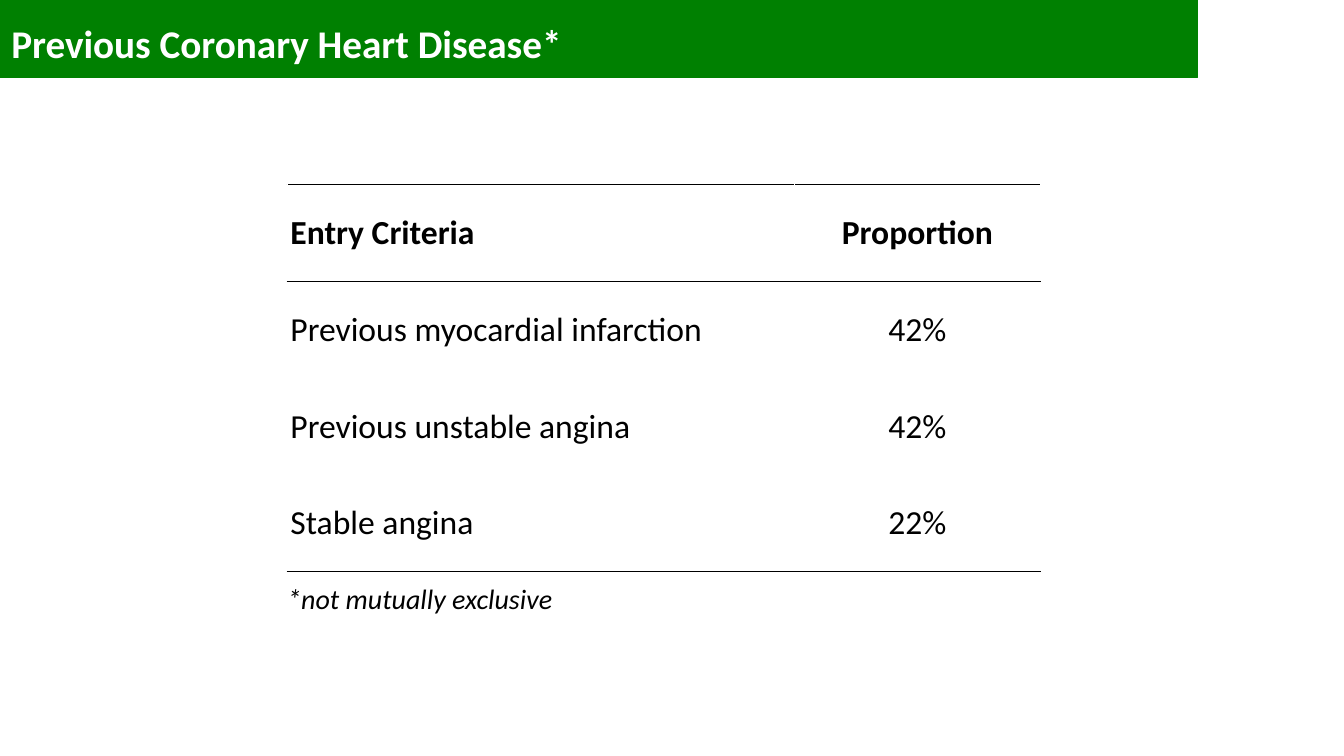
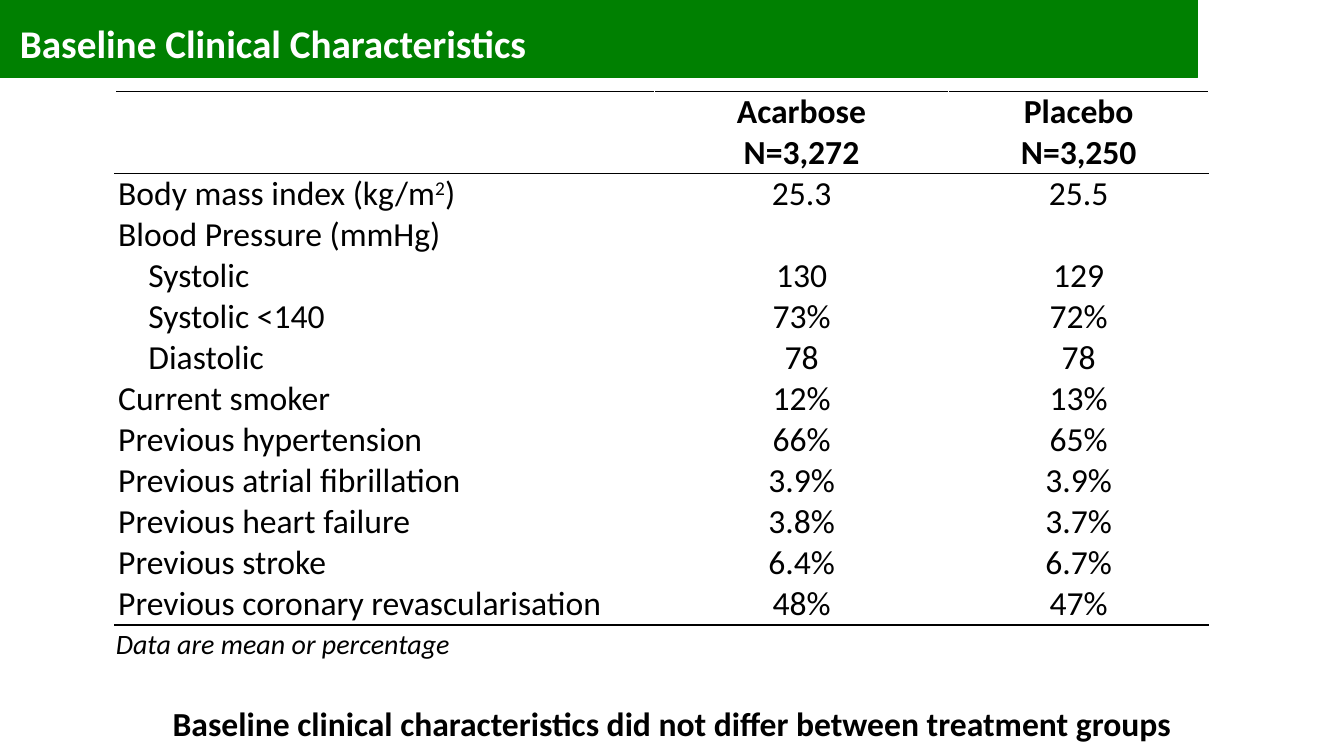
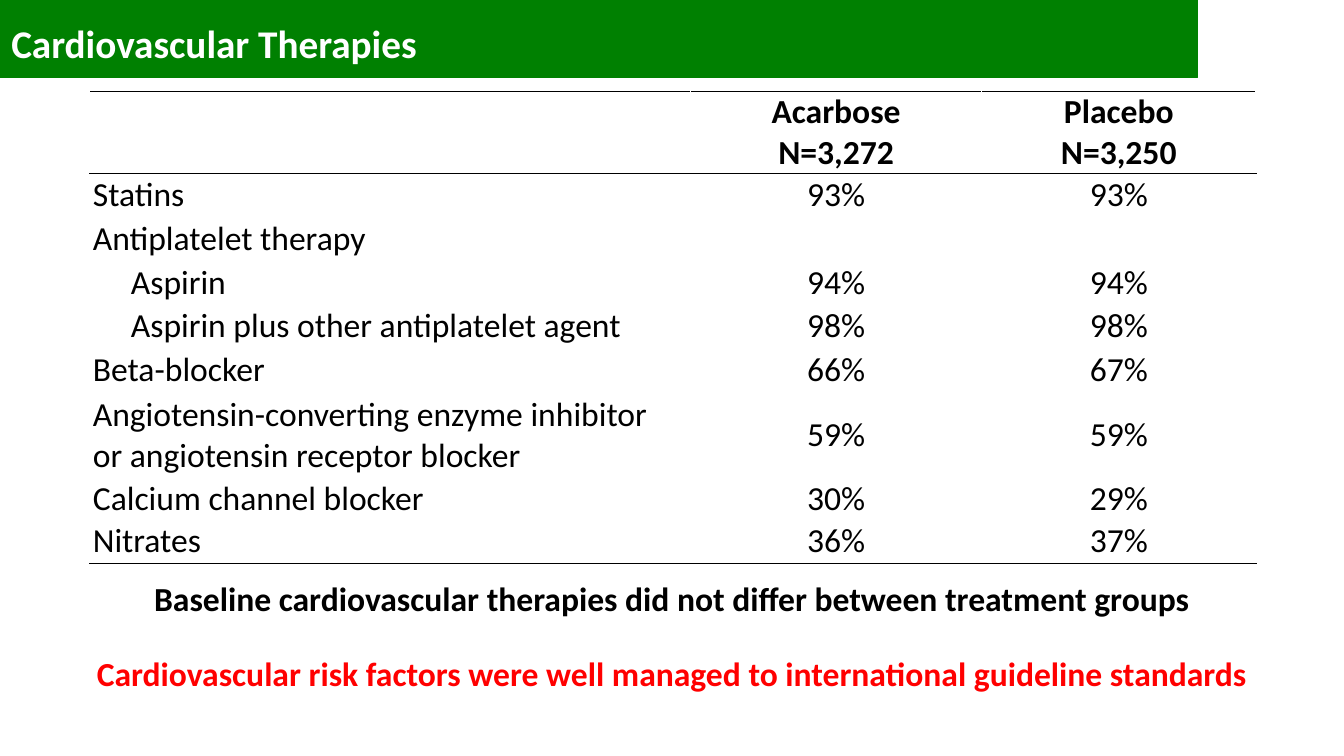
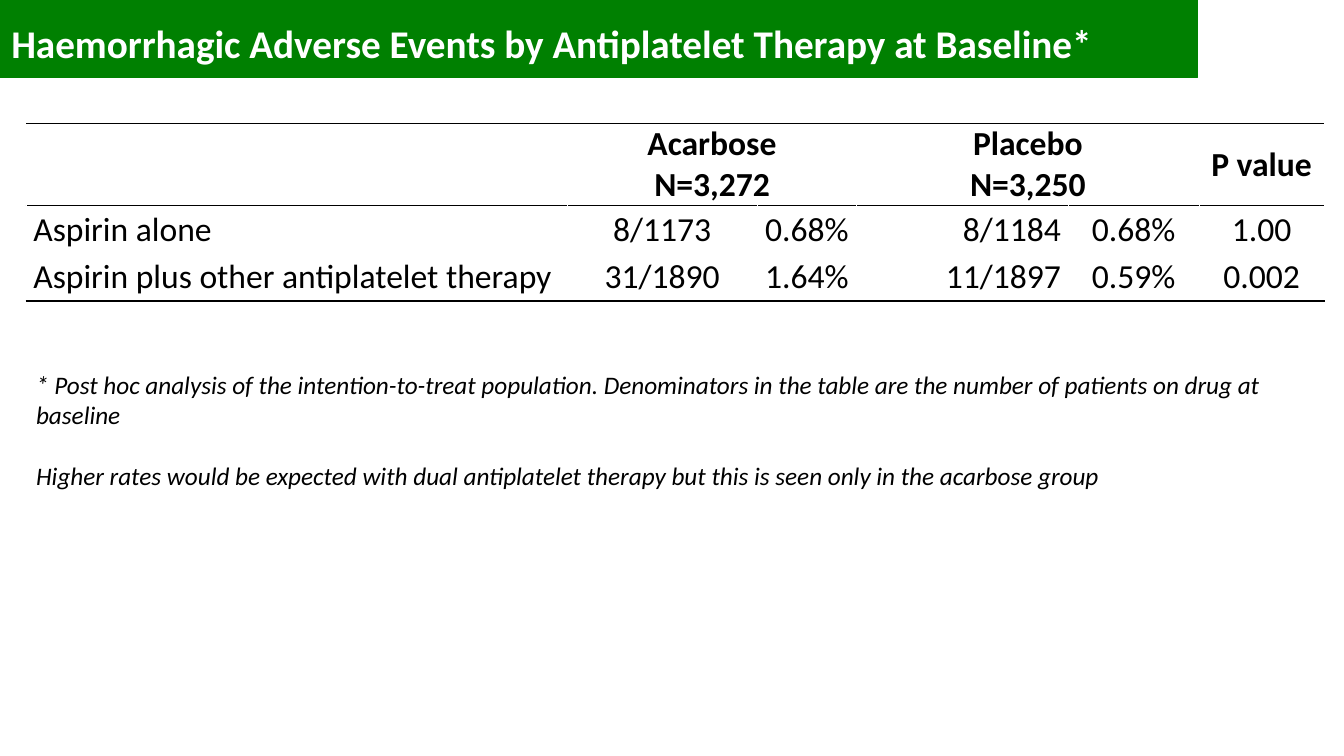
from pptx import Presentation
from pptx.dml.color import RGBColor
from pptx.enum.shapes import MSO_SHAPE
from pptx.enum.text import MSO_ANCHOR, MSO_AUTO_SIZE, PP_ALIGN
from pptx.oxml import parse_xml
from pptx.oxml.ns import nsdecls
from pptx.util import Cm, Pt

# Shared style
GREEN = RGBColor(0x00, 0x80, 0x01)
BLACK = RGBColor(0x00, 0x00, 0x00)
WHITE = RGBColor(0xFF, 0xFF, 0xFF)
RED = RGBColor(0xFF, 0x00, 0x00)
LEFT, CENTER, RIGHT = PP_ALIGN.LEFT, PP_ALIGN.CENTER, PP_ALIGN.RIGHT
MIDDLE = MSO_ANCHOR.MIDDLE
NO_FIT = MSO_AUTO_SIZE.NONE
RECT = MSO_SHAPE.RECTANGLE
FONT = "Calibri"
WIDTH, HEIGHT = 33.87, 19.05

TITLE = {"size": Pt(28), "bold": True}
HEAD = {"size": Pt(24), "bold": True}
BODY = {"size": Pt(24), "bold": False}
NOTE = {"size": Pt(20), "italic": True}
SMALL_NOTE = {"size": Pt(18), "italic": True}

GROUPS = ["Acarbose\nN=3,272", "Placebo\nN=3,250"]


class Deck:
    """Holds the style and the slide being built."""

    def __init__(self):
        self.prs = Presentation()
        self.prs.slide_width, self.prs.slide_height = Cm(WIDTH), Cm(HEIGHT)
        self.layout = self.prs.slide_layouts[5]
        self.s = None

    def slide(self, title, indent=0):
        first = self.s is None
        self.s = self.prs.slides.add_slide(self.layout)
        if first:
            self.band()
        sp = self.s.shapes.title
        sp.left, sp.top, sp.width, sp.height = Cm(0.03 + indent), Cm(0.36), Cm(WIDTH - 0.03 - indent), Cm(1.45)
        self.fill_text(sp.text_frame, title, TITLE, WHITE)
        sp.text_frame.vertical_anchor = MIDDLE

    def band(self):
        """Green title band, placed on the layout for all slides."""
        sp = self.s.shapes.add_shape(RECT, 0, 0, Cm(30.18), Cm(1.96))
        sp.shadow.inherit = False
        sp.fill.solid()
        sp.fill.fore_color.rgb = GREEN
        sp.line.color.rgb = GREEN
        sp.line.width = Pt(1)
        sp.element.nvSpPr.cNvPr.set("id", "20")
        self.layout.shapes.element.insert(2, sp.element)

    def fill_text(self, tf, text, style, color=BLACK, align=LEFT, gap=0):
        """One paragraph per line; text between ^ marks is superscript."""
        tf.word_wrap = True
        for i, line in enumerate(text.split("\n")):
            p = tf.add_paragraph() if i else tf.paragraphs[0]
            p.alignment = align
            p.space_before = Pt(gap if i else 0)
            for j, part in enumerate(line.split("^")):
                r = p.add_run()
                r.text = part
                r.font.name = FONT
                r.font.color.rgb = color
                for name, value in style.items():
                    setattr(r.font, name, value)
                if j % 2:
                    r._r.get_or_add_rPr().set("baseline", "30000")

    def text(self, x, y, w, h, text, style, **options):
        tf = self.s.shapes.add_textbox(Cm(x), Cm(y), Cm(w), Cm(h)).text_frame
        self.fill_text(tf, text, style, **options)
        tf.auto_size = NO_FIT

    def statement(self, y, text, color=BLACK):
        self.text(0, y, WIDTH, 1.27, text, HEAD, color=color, align=CENTER)

    def borders(self, cell, colors):
        """Colours in the order left, right, top, bottom; None for no line."""
        tcPr = cell._tc.get_or_add_tcPr()
        for i, (side, color) in enumerate(zip("LRTB", colors)):
            paint = f'<a:solidFill><a:srgbClr val="{color}"/></a:solidFill>' if color is not None else "<a:noFill/>"
            tcPr.insert(i, parse_xml(f'<a:ln{side} {nsdecls("a")} w="12700">{paint}</a:ln{side}>'))

    def table(self, x, y, widths, heights, rows, pad=0.08, indent=0, sub_rows=(),
              right_cols=(), merges=(), head_side=WHITE):
        frame = self.s.shapes.add_table(len(rows), len(widths), Cm(x), Cm(y), Cm(sum(widths)), Cm(sum(heights)))
        tbl = frame.table
        tbl.first_row = tbl.horz_banding = False
        for col, width in zip(tbl.columns, widths):
            col.width = Cm(width)
        last = len(rows) - 1
        for i, row in enumerate(rows):
            tbl.rows[i].height = Cm(heights[i])
            side = WHITE if i else head_side
            top = BLACK if i < 2 else WHITE
            bottom = BLACK if i in (0, last) else WHITE
            for j, value in enumerate(row):
                cell = tbl.cell(i, j)
                cell.fill.solid()
                cell.fill.fore_color.rgb = WHITE
                self.borders(cell, (side, side, top, bottom))
                cell.vertical_anchor = MIDDLE
                cell.margin_top = cell.margin_bottom = 0
                cell.margin_left = Cm(pad + (indent if j == 0 and i in sub_rows else 0))
                cell.margin_right = Cm(pad)
                if value:
                    align = LEFT if j == 0 else RIGHT if i and j in right_cols else CENTER
                    self.fill_text(cell.text_frame, value, BODY if i else HEAD, align=align)
        for start, end in merges:
            tbl.cell(0, start).merge(tbl.cell(0, end))


def main():
    d = Deck()

    # Previous disease
    d.slide("Previous Coronary Heart Disease*")
    d.table(7.24, 4.65, [12.78, 6.2], [2.44] * 4, [
        ["Entry Criteria", "Proportion"],
        ["Previous myocardial infarction", "42%"],
        ["Previous unstable angina", "42%"],
        ["Stable angina", "22%"],
    ])
    d.text(6.99, 14.53, 7.6, 1.12, "*not mutually exclusive", NOTE)

    # Clinical characteristics
    d.slide("Baseline Clinical Characteristics", indent=0.22)
    d.table(2.9, 2.31, [13.59, 7.42, 6.55], [2.04] + [1.02] * 11, [
        ["", *GROUPS],
        ["Body mass index (kg/m^2^)", "25.3", "25.5"],
        ["Blood Pressure (mmHg)", "", ""],
        ["Systolic", "130", "129"],
        ["Systolic <140", "73%", "72%"],
        ["Diastolic", "78", "78"],
        ["Current smoker", "12%", "13%"],
        ["Previous hypertension", "66%", "65%"],
        ["Previous atrial fibrillation", "3.9%", "3.9%"],
        ["Previous heart failure", "3.8%", "3.7%"],
        ["Previous stroke", "6.4%", "6.7%"],
        ["Previous coronary revascularisation", "48%", "47%"],
    ], indent=0.76, sub_rows=(3, 4, 5))
    d.text(2.67, 15.65, 9.4, 1.12, "Data are mean or percentage", NOTE)
    d.statement(17.6, "Baseline clinical characteristics did not differ between treatment groups")

    # Therapies
    d.slide("Cardiovascular Therapies")
    d.table(2.26, 2.31, [15.14, 7.34, 6.91], [2.04] + [1.1] * 5 + [2.18, 1.02, 1.1], [
        ["", *GROUPS],
        ["Statins", "93%", "93%"],
        ["Antiplatelet therapy", "", ""],
        ["Aspirin", "94%", "94%"],
        ["Aspirin plus other antiplatelet agent", "98%", "98%"],
        ["Beta-blocker", "66%", "67%"],
        ["Angiotensin-converting enzyme inhibitor\nor angiotensin receptor blocker", "59%", "59%"],
        ["Calcium channel blocker", "30%", "29%"],
        ["Nitrates", "36%", "37%"],
    ], indent=0.96, sub_rows=(3, 4))
    d.statement(14.43, "Baseline cardiovascular therapies did not differ between treatment groups")
    d.statement(16.33, "Cardiovascular risk factors were well managed to international guideline standards", RED)

    # Adverse events
    d.slide("Haemorrhagic Adverse Events by Antiplatelet Therapy at Baseline*")
    d.table(0.66, 3.12, [13.64, 4.78, 2.51, 5.33, 3.3, 3.15], [2.04, 1.2, 1.2], [
        ["", GROUPS[0], "", GROUPS[1], "", "P value"],
        ["Aspirin alone", "8/1173", "0.68%", "8/1184", "0.68%", "1.00"],
        ["Aspirin plus other antiplatelet therapy", "31/1890", "1.64%", "11/1897", "0.59%", "0.002"],
    ], pad=0.18, right_cols=(3,), merges=((1, 2), (3, 4)), head_side=None)
    d.text(0.66, 9.17, 32.72, 3.33,
           "* Post hoc analysis of the intention-to-treat population. Denominators in the table "
           "are the number of patients on drug at baseline\n"
           "Higher rates would be expected with dual antiplatelet therapy but this is seen only "
           "in the acarbose group", SMALL_NOTE, gap=22)

    d.prs.save("out.pptx")


if __name__ == "__main__":
    main()
